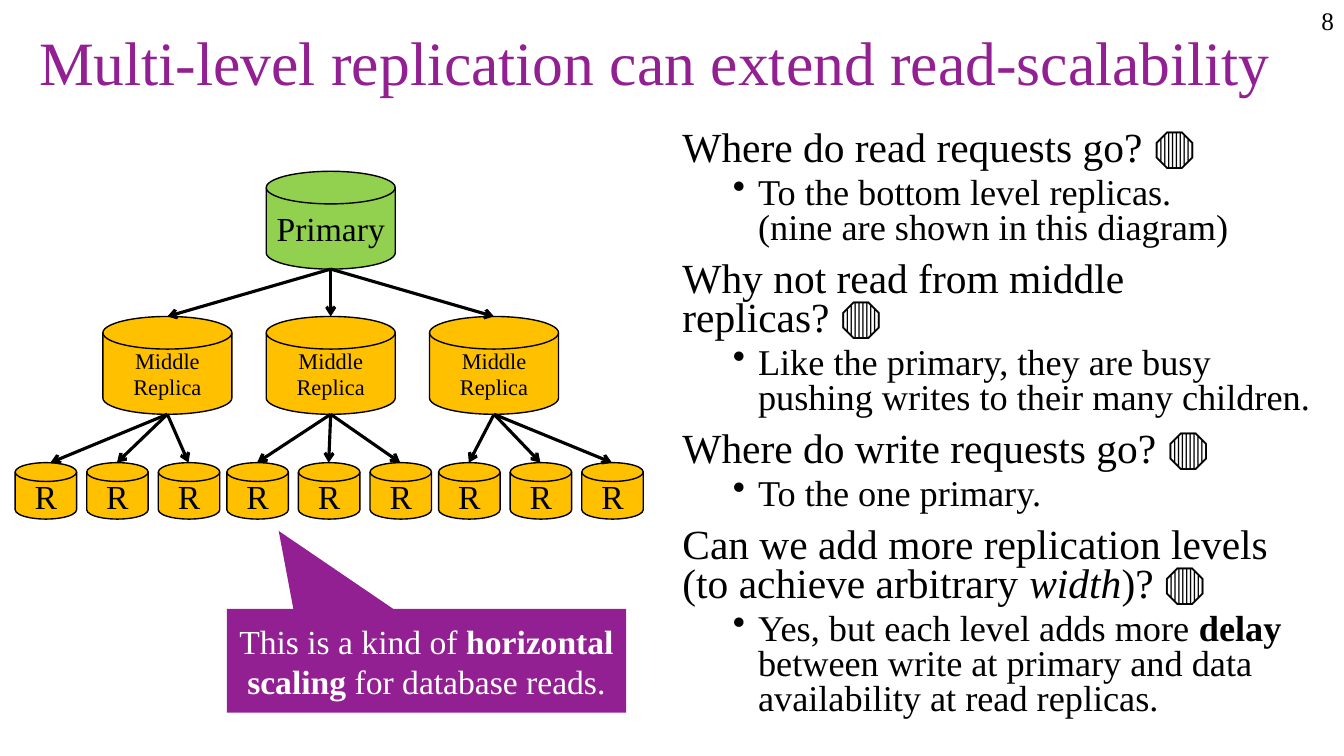
"""Build a slide on how multi-level replication extends read scaling."""
from dataclasses import dataclass

from lxml import etree
from pptx import Presentation
from pptx.dml.color import RGBColor
from pptx.enum.shapes import MSO_CONNECTOR, MSO_SHAPE
from pptx.enum.text import MSO_ANCHOR, PP_ALIGN
from pptx.oxml.ns import qn
from pptx.shapes.autoshape import Shape
from pptx.slide import Slide
from pptx.text.text import _Paragraph
from pptx.util import Pt

PX = 9144
FACE = "Times New Roman"
BLACK = RGBColor(0x00, 0x00, 0x00)
WHITE = RGBColor(0xFF, 0xFF, 0xFF)
PURPLE = RGBColor(0x93, 0x20, 0x92)
GREEN = RGBColor(0x92, 0xD0, 0x50)
AMBER = RGBColor(0xFF, 0xC0, 0x00)
DISK = MSO_SHAPE.FLOWCHART_MAGNETIC_DISK
CALLOUT = MSO_SHAPE.RECTANGULAR_CALLOUT
STRAIGHT = MSO_CONNECTOR.STRAIGHT
MIDDLE = MSO_ANCHOR.MIDDLE
LEFT, CENTER, RIGHT = PP_ALIGN.LEFT, PP_ALIGN.CENTER, PP_ALIGN.RIGHT


@dataclass(frozen=True)
class Box:
    """A place on the slide, in px."""
    x: int
    y: int
    w: int
    h: int

    @property
    def mid(self) -> int:
        """Return the middle of the width."""
        return self.x + self.w // 2

    def emu(self) -> tuple[int, ...]:
        """Return the place in EMU."""
        return tuple(n * PX for n in (self.x, self.y, self.w, self.h))


@dataclass(frozen=True)
class Span:
    """A piece of text in one style."""
    text: str
    bold: bool = False
    slant: bool = False


@dataclass(frozen=True)
class Topic:
    """A question and its answer."""
    ask: tuple[Span, ...]
    reply: tuple[Span, ...]


@dataclass(frozen=True)
class Disk:
    """A database node."""
    label: str
    box: Box
    fill: RGBColor
    size: int


TOPICS = (
    Topic((Span("Where do read requests go? 🛑"),),
          (Span("To the bottom level replicas.\n(nine are shown in this diagram)"),)),
    Topic((Span("Why not read from middle replicas? 🛑"),),
          (Span("Like the primary, they are busy pushing writes to their many children."),)),
    Topic((Span("Where do write requests go? 🛑"),),
          (Span("To the one primary."),)),
    Topic((Span("Can we add more replication levels\n(to achieve arbitrary "),
           Span("width", slant=True), Span(")? 🛑")),
          (Span("Yes, but each level adds more "), Span("delay", bold=True),
           Span(" between write at primary and data availability at read replicas."))),
)
NOTE = (Span("This is a kind of "), Span("horizontal scaling", bold=True),
        Span(" for database reads."))
PRIMARY = Disk("Primary", Box(264, 170, 128, 97), GREEN, 24)
MIDS = [Disk("Middle\nReplica", Box(102 + 162 * i, 314, 128, 97), AMBER, 16)
        for i in range(3)]
LEAVES = [Disk("R", Box(15 + 210 * i + 71 * j, 459, 61, 56), AMBER, 24)
          for i in range(3) for j in range(3)]


def write(para: _Paragraph, spans: tuple[Span, ...], size: float,
          color: RGBColor, align: PP_ALIGN = LEFT) -> None:
    """Fill a paragraph with styled spans."""
    para.alignment = align
    font = para.font
    font.name, font.size, font.color.rgb = FACE, Pt(size), color
    for span in spans:
        for i, line in enumerate(span.text.split("\n")):
            if i:
                para.add_line_break()
            run = para.add_run()
            run.text = line
            if span.bold:
                run.font.bold = True
            if span.slant:
                run.font.italic = True


def add_text(slide: Slide, box: Box) -> Shape:
    """Add an empty text box that wraps."""
    shape = slide.shapes.add_textbox(*box.emu())
    shape.text_frame.word_wrap = True
    return shape


def add_shape(slide: Slide, kind: MSO_SHAPE, box: Box, fill: RGBColor) -> Shape:
    """Add a plain filled shape with centred text."""
    shape = slide.shapes.add_shape(kind, *box.emu())
    shape.shadow.inherit = False
    shape.fill.solid()
    shape.fill.fore_color.rgb = fill
    shape.text_frame.vertical_anchor = MIDDLE
    return shape


def add_disk(slide: Slide, disk: Disk) -> None:
    """Draw one database node."""
    shape = add_shape(slide, DISK, disk.box, disk.fill)
    shape.line.color.rgb = BLACK
    shape.line.width = Pt(1)
    frame = shape.text_frame
    frame.margin_left = frame.margin_right = 0
    frame.margin_top = frame.margin_bottom = 0
    write(frame.paragraphs[0], (Span(disk.label),), disk.size, BLACK, CENTER)


def add_link(slide: Slide, start: Box, end: Box) -> None:
    """Draw an arrow from one node down to the next."""
    tip = max(end.mid, 50)
    link = slide.shapes.add_connector(
        STRAIGHT, start.mid * PX, (start.y + start.h) * PX, tip * PX, end.y * PX)
    link.line.color.rgb = BLACK
    link.line.width = Pt(2.25)
    etree.SubElement(link.line._get_or_add_ln(), qn("a:tailEnd"), type="arrow")
    etree.SubElement(link._element.spPr, qn("a:effectLst"))


def add_topics(slide: Slide) -> None:
    """Write the questions and their bulleted answers."""
    frame = add_text(slide, Box(667, 125, 651, 612)).text_frame
    para = frame.paragraphs[0]
    for i, topic in enumerate(TOPICS):
        if i:
            para = frame.add_paragraph()
        para.line_spacing, para.space_before = 0.8, Pt(10)
        write(para, topic.ask, 29.6, BLACK)
        para = frame.add_paragraph()
        para.level = 1
        para.line_spacing, para.space_before = 0.8, Pt(5)
        write(para, topic.reply, 25.9, BLACK)
        props = para._p.get_or_add_pPr()
        props.set("marL", str(75 * PX))
        props.set("indent", str(-25 * PX))
        bullet = etree.Element(qn("a:buChar"), char="•")
        props.find(qn("a:defRPr")).addprevious(bullet)


def main() -> None:
    """Build and save the slide."""
    deck = Presentation()
    deck.slide_width, deck.slide_height = 1333 * PX, 750 * PX
    slide = deck.slides.add_slide(deck.slide_layouts[6])

    page = add_text(slide, Box(1268, 0, 65, 40)).text_frame
    write(page.paragraphs[0], (Span("8"),), 18, BLACK, RIGHT)
    title = add_text(slide, Box(29, 17, 1273, 97)).text_frame
    title.vertical_anchor = MIDDLE
    title.paragraphs[0].line_spacing = 0.9
    write(title.paragraphs[0],
          (Span("Multi-level replication can extend read-scalability"),), 44, PURPLE)
    add_topics(slide)

    for disk in (PRIMARY, *MIDS, *LEAVES):
        add_disk(slide, disk)
    for mid in MIDS:
        add_link(slide, PRIMARY.box, mid.box)
    for i, leaf in enumerate(LEAVES):
        add_link(slide, MIDS[i // 3].box, leaf.box)

    note = add_shape(slide, CALLOUT, Box(225, 604, 396, 103), PURPLE)
    note.line.fill.background()
    note.adjustments[0], note.adjustments[1] = -0.37, -1.25
    note.text_frame.word_wrap = True
    write(note.text_frame.paragraphs[0], NOTE, 24, WHITE, CENTER)
    deck.save("out.pptx")


if __name__ == "__main__":
    main()
